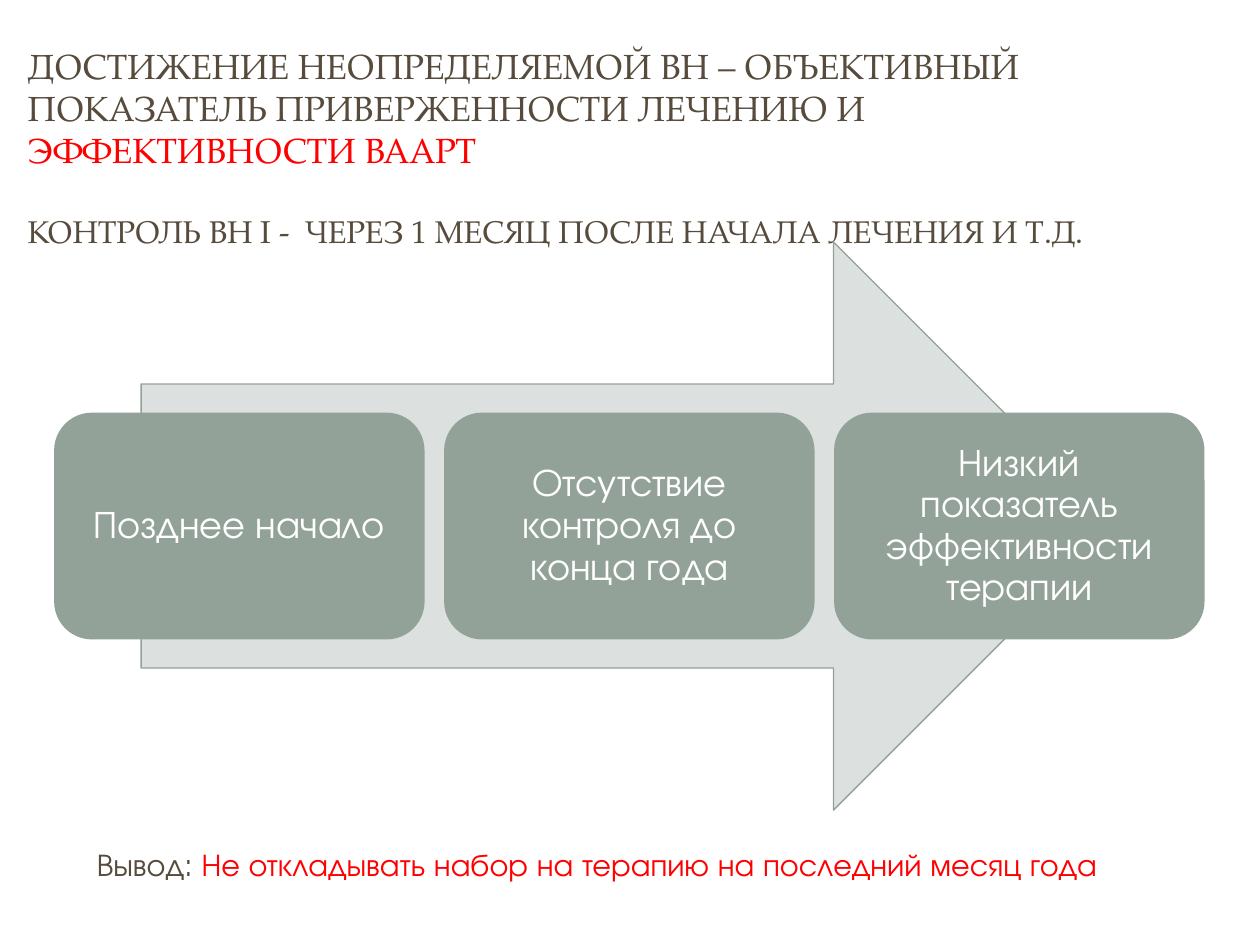
import pptx
import pptx.dml.color
import pptx.enum.shapes
import pptx.enum.text
import pptx.util

Inches = pptx.util.Inches
Pt = pptx.util.Pt
RGBColor = pptx.dml.color.RGBColor
SHAPES = pptx.enum.shapes.MSO_SHAPE
ALIGN = pptx.enum.text.PP_ALIGN
ANCHOR = pptx.enum.text.MSO_ANCHOR

BROWN = RGBColor(0x56, 0x4B, 0x3C)
RED = RGBColor(0xFF, 0x00, 0x00)
SAGE = RGBColor(0x93, 0xA2, 0x99)
PALE_SAGE = RGBColor(0xDC, 0xE0, 0xDE)
WHITE = RGBColor(0xFF, 0xFF, 0xFF)
HEADING_FONT = "TeX Gyre Pagella"
BODY_FONT = "TeX Gyre Adventor"

STEPS = [
    "Позднее начало",
    "Отсутствие контроля до конца года",
    "Низкий показатель эффективности терапии",
]


def add_run(paragraph, text, font_name, size, color):
    run = paragraph.add_run()
    run.text = text
    run.font.name = font_name
    run.font.size = Pt(size)
    run.font.color.rgb = color


def add_filled_shape(slide, kind, left, top, width, height, fill):
    shape = slide.shapes.add_shape(kind, left, top, width, height)
    shape.shadow.inherit = False
    shape.fill.solid()
    shape.fill.fore_color.rgb = fill
    shape.line.fill.background()
    return shape


def place_title(slide, left, top, width, height):
    title = slide.shapes.title
    title.left, title.top, title.width, title.height = left, top, width, height
    frame = title.text_frame
    frame.word_wrap = True
    frame.auto_size = pptx.enum.text.MSO_AUTO_SIZE.NONE
    frame.vertical_anchor = ANCHOR.TOP
    frame.margin_left = Inches(0.22)

    heading = frame.paragraphs[0]
    heading.line_spacing = Pt(24)
    add_run(heading, "ДОСТИЖЕНИЕ НЕОПРЕДЕЛЯЕМОЙ ВН – ОБЪЕКТИВНЫЙ ПОКАЗАТЕЛЬ ПРИВЕРЖЕННОСТИ ЛЕЧЕНИЮ И ",
            HEADING_FONT, 20, BROWN)
    add_run(heading, "ЭФФЕКТИВНОСТИ ВААРТ", HEADING_FONT, 20, RED)

    control = frame.add_paragraph()
    control.line_spacing = Pt(21.6)
    control.space_before = Pt(24)
    add_run(control, "КОНТРОЛЬ ВН I -  ЧЕРЕЗ 1 МЕСЯЦ ПОСЛЕ НАЧАЛА ЛЕЧЕНИЯ И Т.Д.",
            HEADING_FONT, 18, BROWN)
    for paragraph in frame.paragraphs:
        paragraph.alignment = ALIGN.LEFT


def place_step(slide, text, left, top, width, height):
    step = add_filled_shape(slide, SHAPES.ROUNDED_RECTANGLE, left, top, width, height, SAGE)
    frame = step.text_frame
    frame.word_wrap = True
    frame.vertical_anchor = ANCHOR.MIDDLE
    frame.margin_left = frame.margin_right = Inches(0.09)
    frame.margin_top = frame.margin_bottom = Inches(0.09)
    paragraph = frame.paragraphs[0]
    paragraph.alignment = ALIGN.CENTER
    paragraph.line_spacing = 0.9
    add_run(paragraph, text, BODY_FONT, 22, WHITE)


def place_process(slide, left, top, width, height):
    arrow_margin = Inches(0.69)
    arrow = add_filled_shape(slide, SHAPES.RIGHT_ARROW, left + arrow_margin, top,
                             width - 2 * arrow_margin, height, PALE_SAGE)
    arrow.line.color.rgb = SAGE
    arrow.line.width = Pt(0.75)

    step_width, step_height = Inches(2.94), Inches(1.8)
    pitch = (width - step_width) // (len(STEPS) - 1)
    step_top = top + (height - step_height) // 2
    for index, text in enumerate(STEPS):
        place_step(slide, text, left + index * pitch, step_top, step_width, step_height)


def place_conclusion(slide, left, top, width, height):
    frame = slide.shapes.add_textbox(left, top, width, height).text_frame
    frame.word_wrap = True
    paragraph = frame.paragraphs[0]
    add_run(paragraph, "Вывод:", BODY_FONT, 18, BROWN)
    add_run(paragraph, " Не откладывать набор на терапию на последний месяц года",
            BODY_FONT, 18, RED)


def main():
    presentation = pptx.Presentation()
    presentation.slide_width = Inches(10)
    presentation.slide_height = Inches(7.5)
    slide = presentation.slides.add_slide(presentation.slide_layouts.get_by_name("Title Only"))
    place_title(slide, Inches(0), Inches(0.3), Inches(9.03), Inches(1.75))
    place_process(slide, Inches(0.43), Inches(1.92), Inches(9.13), Inches(4.51))
    place_conclusion(slide, Inches(0.67), Inches(6.66), Inches(8.66), Inches(0.71))
    presentation.save("out.pptx")


if __name__ == "__main__":
    main()
